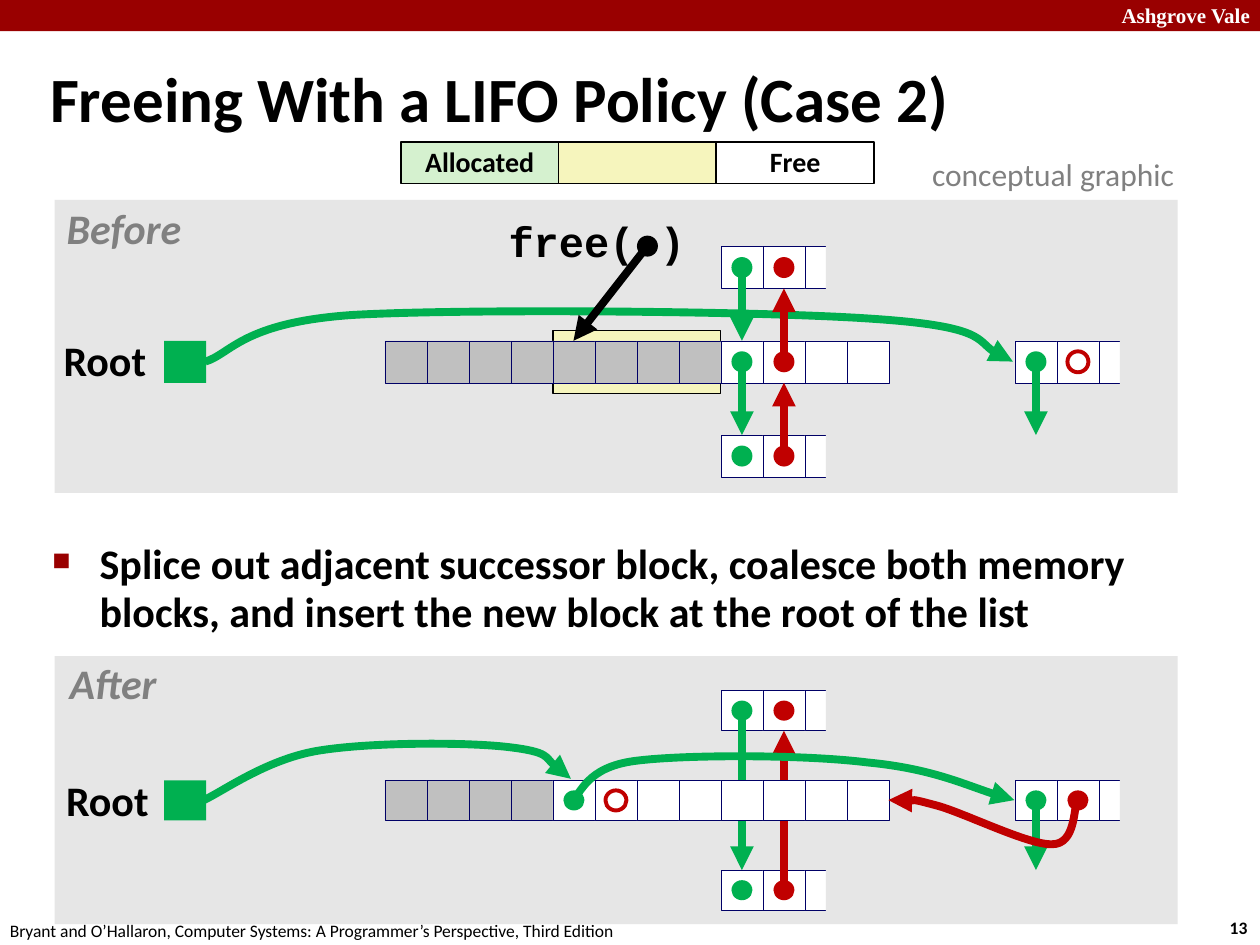
from lxml import etree
from pptx import Presentation
from pptx import util as u
from pptx.dml import color
from pptx.enum import shapes, text
from pptx.oxml import ns

RECT = shapes.MSO_SHAPE.RECTANGLE
OVAL = shapes.MSO_SHAPE.OVAL
STRAIGHT = shapes.MSO_CONNECTOR.STRAIGHT
CENTER = text.PP_ALIGN.CENTER
RIGHT = text.PP_ALIGN.RIGHT
MIDDLE = text.MSO_ANCHOR.MIDDLE
GREEN, RED, BLACK, WHITE = "00B050", "C00000", "000000", "FFFFFF"
PANEL, GREY, YELLOW, NAVY, DIM = "E6E6E6", "C0C0C0", "F6F5BD", "000066", "808080"
CRIMSON = "990000"
CELL = 2.54 / 3
GRID_LEFT = 7.76
DOT = CELL / 2
THICK = 4.5


def paint(target, colour):
    if colour is None:
        target.background()
    else:
        target.solid()
        target.fore_color.rgb = color.RGBColor.from_string(colour)


def write(box, words, size=24, font="Calibri", colour=BLACK, bold=False, italic=False,
          align=None, anchor=None, wrap=False, spacing=None, side=0.25, edge=0.13):
    frame = box.text_frame
    frame.word_wrap = wrap
    frame.margin_left = frame.margin_right = u.Cm(side)
    frame.margin_top = frame.margin_bottom = u.Cm(edge)
    frame.vertical_anchor = anchor or text.MSO_ANCHOR.TOP
    para = frame.paragraphs[0]
    para.alignment = align
    para.line_spacing = spacing
    span = para.add_run()
    span.text = words
    span.font.size = u.Pt(size)
    span.font.name = font
    span.font.bold = bold
    span.font.italic = italic
    paint(span.font.fill, colour)
    return para


deck = Presentation()
deck.slide_width, deck.slide_height = u.Cm(25.4), u.Cm(19.05)
page = deck.slides.add_slide(deck.slide_layouts[6])

before = [
    ("rect", (11.15, 6.67, 3.38, 1.27), YELLOW, BLACK, 0.75),
    ("curve", [(4.14, 7.29), (4.65, 7.14), (4.88, 6.5), (7.11, 6.35), (9.37, 6.22),
               (15.39, 6.27), (17.63, 6.43), (19.84, 6.58), (19.84, 7.11), (20.42, 7.29)], GREEN),
    ("cells", 0, 0, 8, GREY), ("cells", 8, 0, 4, WHITE),
    ("strip", 8, -1), ("strip", 8, 1), ("strip", 15, 0),
    ("arrow", 8, 0, 1, GREEN), ("arrow", 8, -1, 0, GREEN),
    ("arrow", 9, 1, 0, RED), ("arrow", 9, 0, -1, RED), ("arrow", 15, 0, 1, GREEN),
    ("dot", 8, -1, GREEN), ("dot", 8, 0, GREEN), ("dot", 8, 1, GREEN), ("dot", 15, 0, GREEN),
    ("dot", 9, -1, RED), ("dot", 9, 0, RED), ("dot", 9, 1, RED), ("ring", 16, 0, RED),
]
after = [
    ("strip", 8, -1), ("strip", 8, 1), ("strip", 15, 0),
    ("arrow", 9, 1, -1, RED), ("arrow", 8, -1, 1, GREEN), ("arrow", 15, 0, 1, GREEN),
    ("cells", 0, 0, 4, GREY), ("cells", 4, 0, 8, WHITE),
    ("dot", 8, -1, GREEN), ("dot", 8, 1, GREEN), ("dot", 4, 0, GREEN), ("dot", 15, 0, GREEN),
    ("dot", 9, -1, RED), ("dot", 9, 1, RED), ("dot", 16, 0, RED), ("ring", 5, 0, RED),
    ("curve", [(11.53, 16.13), (11.73, 16), (11.81, 15.47), (12.8, 15.34), (13.79, 15.21),
               (16.21, 15.21), (17.48, 15.37), (18.75, 15.49), (19.84, 15.98), (20.45, 16.13)], GREEN),
    ("curve", [(21.72, 16.13), (21.64, 16.28), (21.69, 17.02), (21.21, 17.02), (20.73, 17.04),
               (19.38, 16.36), (18.85, 16.23), (18.29, 16.08), (18.11, 16.15), (17.91, 16.13)], RED),
    ("curve", [(4.11, 16.13), (4.5, 15.95), (5.36, 15.32), (6.38, 15.14), (7.42, 14.96),
               (9.4, 14.96), (10.24, 15.06), (11.1, 15.16), (11.25, 15.57), (11.51, 15.7)], GREEN),
]

figures = [("solid", (RECT, (0, 0, 25.4, 0.63), CRIMSON, None, 0))]
scenes = [(4.03, 5.91, 6.87, 1.9, CELL, before), (13.23, 5.4, 15.73, 1.81, 0.81, after)]
for panel_top, panel_height, middle, pitch, height, steps in scenes:
    figures += [("solid", (RECT, (1.1, panel_top, 22.64, panel_height), PANEL, None, 0)),
                ("solid", (RECT, (3.31, middle, CELL, height), GREEN, None, 0))]
    for kind, *args in steps:
        if kind == "rect":
            figures.append(("solid", (RECT, *args)))
        elif kind == "curve":
            figures.append(("curve", args))
        elif kind == "arrow":
            column, start, end, colour = args
            x = GRID_LEFT + (column + 0.5) * CELL
            tip = middle + end * pitch + (0 if end > start else height)
            figures.append(("arrow", ((x, middle + start * pitch + height / 2), (x, tip), colour)))
        else:
            column, level, *style = args
            x, y = GRID_LEFT + column * CELL, middle + level * pitch
            if kind in ("dot", "ring"):
                place = (x + DOT / 2, y + height / 4, DOT, height / 2)
                look = (style[0], None, 0) if kind == "dot" else (None, style[0], 2.25)
                figures.append(("solid", (OVAL, place, *look)))
            else:
                count, fill = style or (3, WHITE)
                figures += [("solid", (RECT, (x + i * CELL, y, CELL, height), fill, NAVY, 0.25))
                            for i in range(count)]
                if kind == "strip":
                    mask = (x + 2.5 * CELL, y - height / 4, CELL, height * 1.5)
                    figures.append(("solid", (RECT, mask, PANEL, None, 0)))

figures += [("solid", (OVAL, (12.84, 4.75, DOT, DOT), BLACK, None, 0)),
            ("arrow", ((13.05, 4.96), (11.56, 6.87), BLACK))]

label = dict(bold=True, align=CENTER, spacing=0.9, side=0.13)
heading = dict(label, colour=DIM, italic=True)
texts = [
    ("Ashgrove Vale", (21.95, -0.08, 3.5, 0.76),
     dict(size=12, font="Times New Roman", colour=WHITE, bold=True, align=RIGHT, wrap=True)),
    ("13", (24.54, 18.36, 0.94, 0.69), dict(size=10, bold=True)),
    ("Bryant and O’Hallaron, Computer Systems: A Programmer’s Perspective, Third Edition",
     (-0.05, 18.42, 12.9, 0.69), dict(size=10)),
    ("Freeing With a LIFO Policy (Case 2)", (0.76, 0.99, 24.2, 2.18),
     dict(size=36, bold=True, anchor=MIDDLE, wrap=True, spacing=0.87)),
    ("free( )", (10.11, 4.32, 3.84, 1.19), dict(label, font="Courier New")),
    ("Root", (1.15, 6.73, 1.93, 1.19), label),
    ("Root", (1.2, 15.6, 1.93, 1.12), label),
    ("Before", (1.19, 4.06, 2.62, 1.19), heading),
    ("After", (1.25, 13.25, 2.06, 1.12), heading),
    ("conceptual graphic", (18.54, 3, 5.51, 1.02), dict(size=18, colour=DIM)),
]

for kind, args in figures:
    if kind == "solid":
        shape, place, fill, line, width = args
        item = page.shapes.add_shape(shape, *map(u.Cm, place))
        paint(item.fill, fill)
    elif kind == "arrow":
        start, end, line = args
        width = THICK
        item = page.shapes.add_connector(STRAIGHT, *map(u.Cm, start + end))
    else:
        points, line = args
        width = THICK
        knots = [(u.Cm(x), u.Cm(y)) for x, y in points]
        builder = page.shapes.build_freeform(*knots[0])
        builder.add_line_segments(knots[1:], close=False)
        item = builder.convert_to_shape()
        paint(item.fill, None)
        segments = list(item._element.iter(ns.qn("a:lnTo")))
        for i in range(0, len(segments), 3):
            bend = etree.Element(ns.qn("a:cubicBezTo"))
            segments[i].addprevious(bend)
            for segment in segments[i:i + 3]:
                bend.append(segment[0])
                segment.getparent().remove(segment)
    paint(item.line.fill, line)
    if line:
        item.line.width = u.Pt(width)
    properties = item._element.spPr
    if kind != "solid":
        etree.SubElement(properties.find(ns.qn("a:ln")), ns.qn("a:tailEnd"), type="triangle")
    if kind == "arrow":
        etree.SubElement(properties, ns.qn("a:effectLst"))
    else:
        item.shadow.inherit = False

for words, place, style in texts:
    write(page.shapes.add_textbox(*map(u.Cm, place)), words, **style)

body = page.shapes.add_textbox(*map(u.Cm, (0.8, 10.79, 23.09, 2.18)))
para = write(body, "Splice out adjacent successor block, coalesce both memory blocks, "
             "and insert the new block at the root of the list", bold=True, wrap=True, spacing=0.95)
layout = para._p.get_or_add_pPr()
layout.set("marL", str(u.Cm(0.96)))
layout.set("indent", str(-u.Cm(0.96)))
bullet_colour = etree.SubElement(layout, ns.qn("a:buClr"))
etree.SubElement(bullet_colour, ns.qn("a:srgbClr"), val=CRIMSON)
etree.SubElement(layout, ns.qn("a:buSzPct"), val="60000")
etree.SubElement(layout, ns.qn("a:buChar"), char="■")

for i, (words, fill) in enumerate([("Allocated", "D5F1CF"), ("", YELLOW), ("Free", WHITE)]):
    key = page.shapes.add_shape(RECT, *map(u.Cm, (8.08 + i * 3.18, 2.86, 3.18, 0.84)))
    key.shadow.inherit = False
    paint(key.fill, fill)
    paint(key.line.fill, BLACK)
    key.line.width = u.Pt(1)
    if words:
        write(key, words, size=16, bold=True, align=CENTER, anchor=MIDDLE, spacing=0.98)

deck.save("out.pptx")
